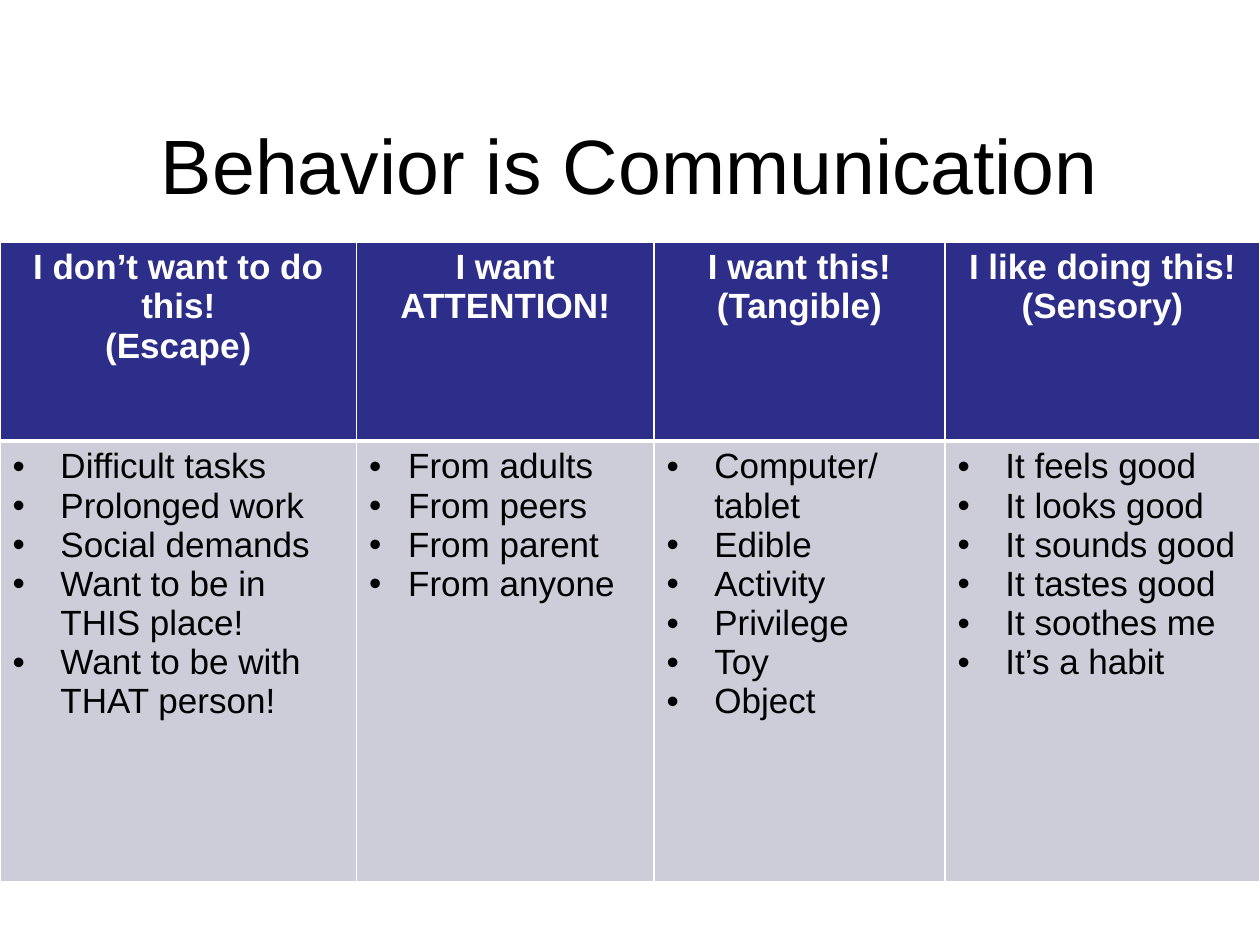
"""Build the slide on behavior as communication."""
from lxml import etree
from pptx import Presentation
from pptx import util as u
from pptx.dml.color import RGBColor
from pptx.enum import text
from pptx.oxml import ns

HUES = {"ink": "000000", "white": "FFFFFF", "head": "2D2D8A", "body": "CDCDDA"}
COLS = [
    (2.83, 0.38, ["I don’t want to do this!", "(Escape)"],
     ["Difficult tasks", "Prolonged work", "Social demands",
      "Want to be in THIS place!", "Want to be with THAT person!"]),
    (2.36, 0.31, ["I want ATTENTION!"],
     ["From adults", "From peers", "From parent", "From anyone"]),
    (2.31, 0.38, ["I want this!", "(Tangible)"],
     ["Computer/ tablet", "Edible", "Activity", "Privilege", "Toy", "Object"]),
    (2.5, 0.38, ["I like doing this!", "(Sensory)"],
     ["It feels good", "It looks good", "It sounds good",
      "It tastes good", "It soothes me", "It’s a habit"]),
]


def write(frame, lines, size, hue, bold=False, indent=0):
    for i, line in enumerate(lines):
        para = frame.paragraphs[0] if i == 0 else frame.add_paragraph()
        if indent:
            props = para._p.get_or_add_pPr()
            props.set("marL", str(u.Inches(indent)))
            props.set("indent", str(-u.Inches(indent)))
            etree.SubElement(props, ns.qn("a:buFont"), typeface="Arial")
            etree.SubElement(props, ns.qn("a:buChar"), char="•")
        else:
            para.alignment = text.PP_ALIGN.CENTER
        run = para.add_run()
        run.text = line
        run.font.name = "Arial"
        run.font.size = u.Pt(size)
        run.font.bold = bold
        run.font.color.rgb = RGBColor.from_string(HUES[hue])


def paint(cell, hue, edges):
    props = cell._tc.get_or_add_tcPr()
    for side, width in edges.items():
        line = etree.SubElement(props, ns.qn("a:ln" + side), w=str(u.Pt(width)))
        fill = etree.SubElement(line, ns.qn("a:solidFill"))
        etree.SubElement(fill, ns.qn("a:srgbClr"), val=HUES["white"])
    cell.fill.solid()
    cell.fill.fore_color.rgb = RGBColor.from_string(HUES[hue])


deck = Presentation()
deck.slide_width, deck.slide_height = u.Inches(10), u.Inches(7.5)
slide = deck.slides.add_slide(deck.slide_layouts[6])

title = slide.shapes.add_textbox(
    u.Inches(0.75), u.Inches(0.67), u.Inches(8.5), u.Inches(1.25)).text_frame
title.word_wrap = True
title.vertical_anchor = text.MSO_ANCHOR.MIDDLE
write(title, ["Behavior is Communication"], 44, "ink")

table = slide.shapes.add_table(
    2, len(COLS), 0, u.Inches(1.92), u.Inches(10), u.Inches(5.08)).table
table.rows[0].height, table.rows[1].height = u.Inches(1.58), u.Inches(3.5)
for i, (width, indent, heads, items) in enumerate(COLS):
    table.columns[i].width = u.Inches(width)
    head, body = table.cell(0, i), table.cell(1, i)
    paint(head, "head", {"L": 1, "R": 1, "T": 1, "B": 3})
    paint(body, "body", {"L": 1, "R": 1, "T": 3, "B": 1})
    write(head.text_frame, heads, 20, "white", bold=True)
    write(body.text_frame, items, 20, "ink", indent=indent)

deck.save("out.pptx")
